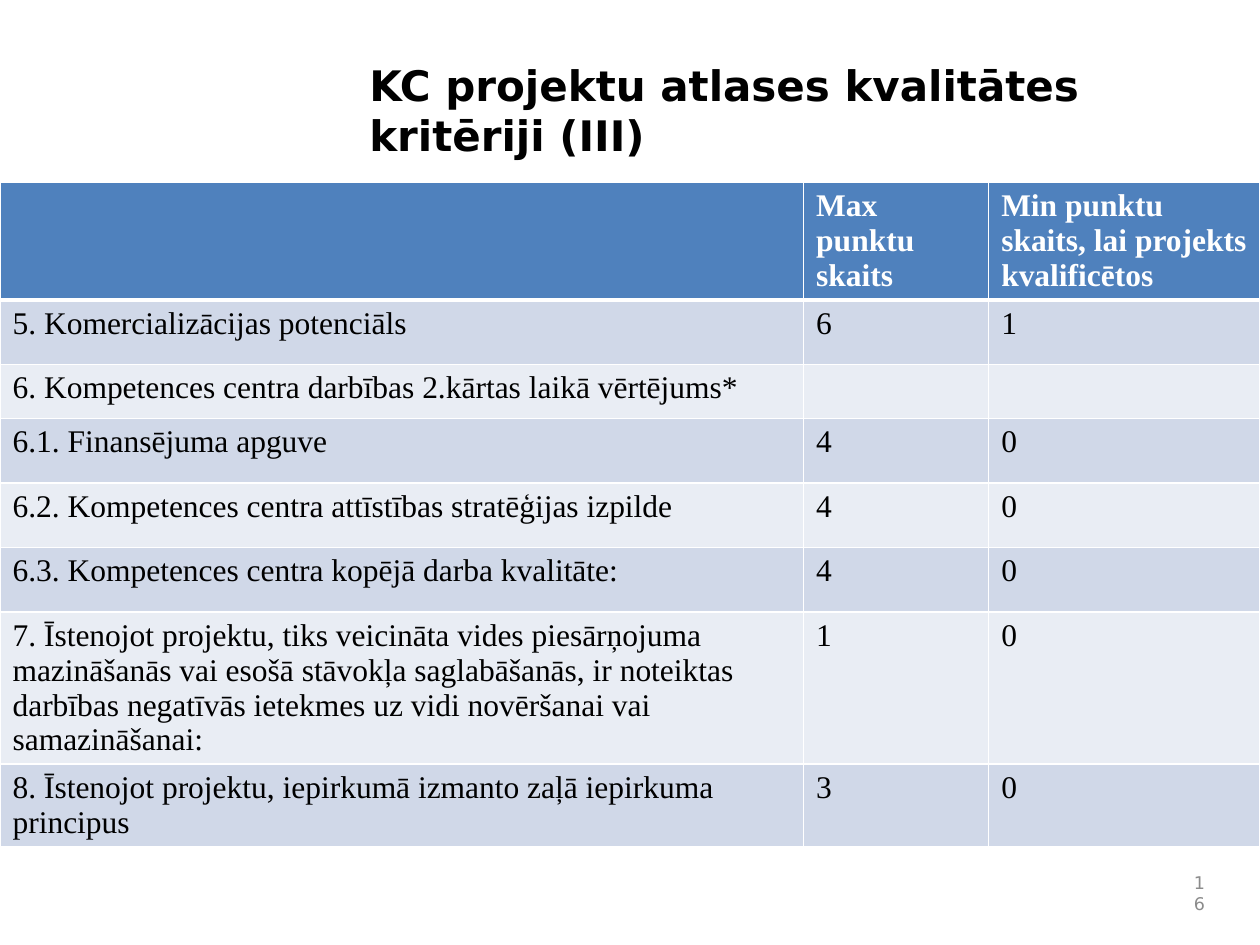
from lxml import etree
from pptx import Presentation
from pptx.dml.color import RGBColor
from pptx.enum.text import MSO_ANCHOR as Anchor, PP_ALIGN as Align
from pptx.oxml.ns import qn
from pptx.util import Cm, Pt

BLACK = RGBColor(0x00, 0x00, 0x00)
WHITE = RGBColor(0xFF, 0xFF, 0xFF)
GREY = RGBColor(0x8C, 0x8C, 0x8C)
HEADER_BLUE = RGBColor(0x4F, 0x81, 0xBD)
BANDS = (RGBColor(0xD0, 0xD8, 0xE8), RGBColor(0xE9, 0xED, 0xF4))

TITLE_FONT = {"name": "DejaVu Sans", "size": Pt(24), "bold": True}
NUMBER_FONT = {"name": "DejaVu Sans", "size": Pt(10), "bold": False}
HEADER_FONT = {"name": "Times New Roman", "size": Pt(18), "bold": True}
BODY_FONT = {**HEADER_FONT, "bold": False}

COLUMN_WIDTHS = (16.2, 3.73, 5.47)
ROW_HEIGHTS = (1.3, 1.3, 1.09, 1.3, 1.3, 1.3, 1.47, 1.09)
CRITERIA = (
    ("", "Max punktu skaits", "Min punktu skaits, lai projekts kvalificētos"),
    ("5. Komercializācijas potenciāls", "6", "1"),
    ("6. Kompetences centra darbības 2.kārtas laikā vērtējums*", "", ""),
    ("6.1. Finansējuma apguve", "4", "0"),
    ("6.2. Kompetences centra attīstības stratēģijas izpilde", "4", "0"),
    ("6.3. Kompetences centra kopējā darba kvalitāte:", "4", "0"),
    ("7. Īstenojot projektu, tiks veicināta vides piesārņojuma mazināšanās "
     "vai esošā stāvokļa saglabāšanās, ir noteiktas darbības negatīvās "
     "ietekmes uz vidi novēršanai vai samazināšanai:", "1", "0"),
    ("8. Īstenojot projektu, iepirkumā izmanto zaļā iepirkuma principus", "3", "0"),
)


def write_text(frame, text, font_values, color, alignment=Align.LEFT):
    """Write one formatted paragraph into a text frame."""
    paragraph = frame.paragraphs[0]
    paragraph.alignment = alignment
    run = paragraph.add_run()
    run.text = text
    for name, value in font_values.items():
        setattr(run.font, name, value)
    run.font.color.rgb = color


def set_borders(cell, bottom_width):
    """Give a cell white borders with the chosen bottom width."""
    properties = cell._tc.get_or_add_tcPr()
    widths = {"lnL": 1, "lnR": 1, "lnT": 1, "lnB": bottom_width}
    for index, (side, width) in enumerate(widths.items()):
        line = etree.Element(qn(f"a:{side}"), w=str(Pt(width)))
        fill = etree.SubElement(line, qn("a:solidFill"))
        etree.SubElement(fill, qn("a:srgbClr"), val=str(WHITE))
        properties.insert(index, line)


def add_title(slide, text):
    """Place and fill the title placeholder."""
    title = slide.shapes.title
    place = {"left": Cm(7.19), "top": Cm(1.07), "width": Cm(16.94), "height": Cm(2.87)}
    for name, value in place.items():
        setattr(title, name, value)
    title.text_frame.word_wrap = True
    title.text_frame.vertical_anchor = Anchor.TOP
    write_text(title.text_frame, text, TITLE_FONT, BLACK)


def add_criteria_table(slide):
    """Add the table of criteria with a header and banded rows."""
    table = slide.shapes.add_table(
        len(CRITERIA), len(COLUMN_WIDTHS), Cm(0), Cm(3.68),
        Cm(sum(COLUMN_WIDTHS)), Cm(sum(ROW_HEIGHTS))).table
    for column, width in zip(table.columns, COLUMN_WIDTHS):
        column.width = Cm(width)
    for index, (row, height, texts) in enumerate(zip(table.rows, ROW_HEIGHTS, CRITERIA)):
        row.height = Cm(height)
        is_header = index == 0
        for cell, text in zip(row.cells, texts):
            cell.fill.solid()
            cell.fill.fore_color.rgb = HEADER_BLUE if is_header else BANDS[(index - 1) % 2]
            set_borders(cell, 3 if is_header else 1)
            if text:
                write_text(cell.text_frame, text, HEADER_FONT if is_header else BODY_FONT,
                           WHITE if is_header else BLACK)


def add_slide_number(slide, text):
    """Add the small slide number at the lower right."""
    frame = slide.shapes.add_textbox(Cm(23.7), Cm(17.58), Cm(0.84), Cm(0.84)).text_frame
    frame.word_wrap = True
    frame.vertical_anchor = Anchor.MIDDLE
    write_text(frame, text, NUMBER_FONT, GREY, Align.RIGHT)


def main():
    """Build the slide and save it."""
    presentation = Presentation()
    presentation.slide_width = Cm(25.4)
    presentation.slide_height = Cm(19.05)
    slide = presentation.slides.add_slide(presentation.slide_layouts[5])
    add_title(slide, "KC projektu atlases kvalitātes kritēriji (III)")
    add_criteria_table(slide)
    add_slide_number(slide, "16")
    presentation.save("out.pptx")


if __name__ == "__main__":
    main()
